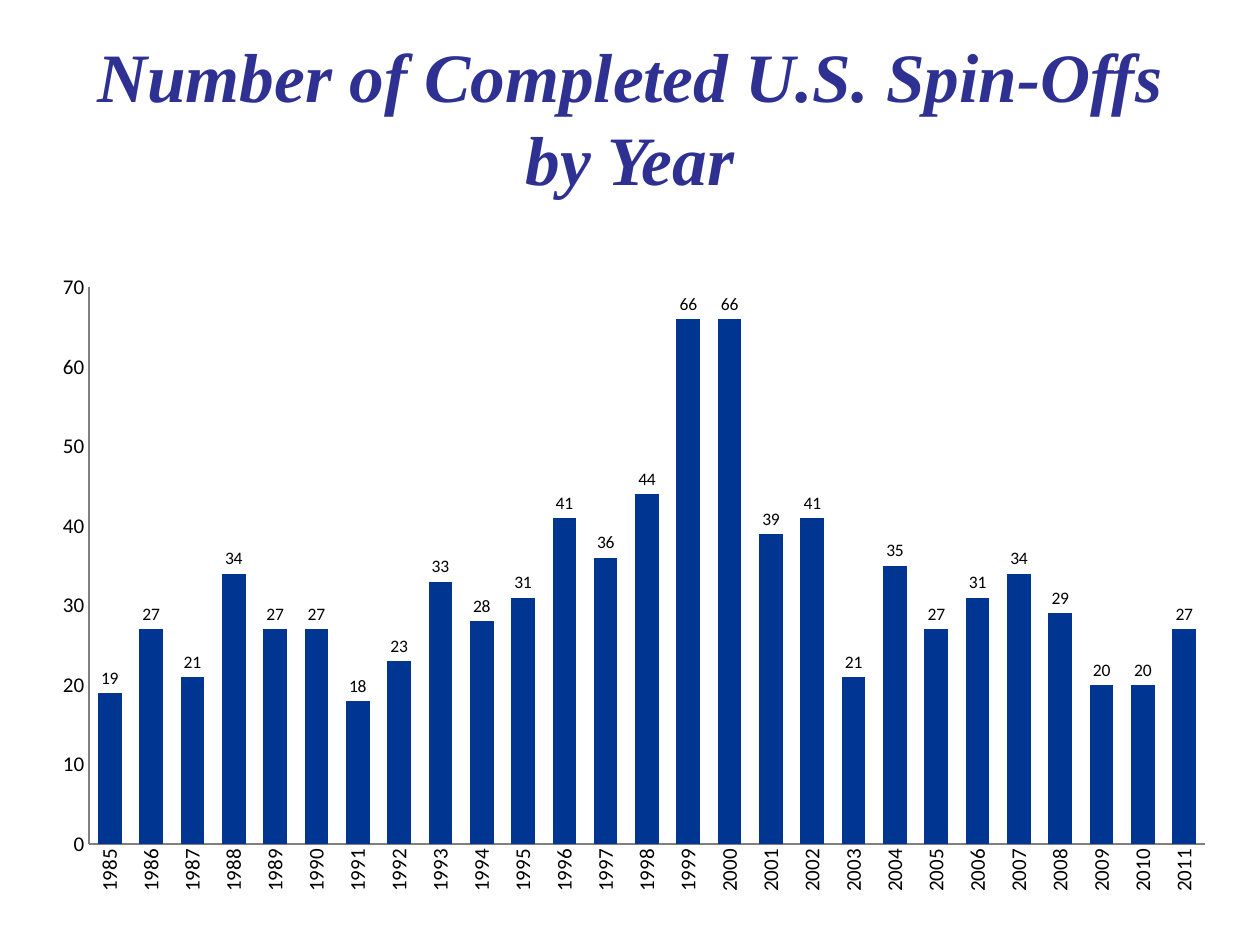
from pptx import Presentation
from pptx.chart.data import CategoryChartData
from pptx.dml.color import RGBColor
from pptx.enum.chart import XL_CHART_TYPE as ChartType, XL_LABEL_POSITION as LabelPosition
from pptx.enum.chart import XL_TICK_MARK as TickMark
from pptx.enum.text import MSO_ANCHOR as Anchor, PP_ALIGN as Align
from pptx.oxml import parse_xml
from pptx.oxml.ns import nsdecls
from pptx.util import Cm, Pt

# Content
TITLE = "Number of Completed U.S. Spin-Offs by Year"
FIRST_YEAR = 1985
SPIN_OFFS = [19, 27, 21, 34, 27, 27, 18, 23, 33, 28, 31, 41, 36, 44,
             66, 66, 39, 41, 21, 35, 27, 31, 34, 29, 20, 20, 27]


class Theme:
    title_font, chart_font = "Times New Roman", "Calibri"
    title_size, axis_size, label_size = Pt(39.6), Pt(12), Pt(10)
    title_color = RGBColor.from_string("2E3192")
    bar_color = RGBColor.from_string("003591")
    text_color = RGBColor.from_string("000000")
    axis_color = RGBColor.from_string("808080")


# Places: left, top, width, height
TITLE_BOX = [Cm(v) for v in (1.27, 0.76, 22.86, 3.18)]
CHART_BOX = [Cm(v) for v in (0.84, 5.28, 23.93, 12.9)]
# Plot area as shares of the chart
PLOT = {"x": 0.04, "y": 0.04, "w": 0.94, "h": 0.87}


def style_font(font, name, size, color):
    font.name, font.size = name, size
    font.color.rgb = color


def add_title(page):
    box = page.shapes.title
    box.left, box.top, box.width, box.height = TITLE_BOX
    frame = box.text_frame
    frame.text = TITLE
    frame.word_wrap = True
    frame.vertical_anchor = Anchor.MIDDLE
    para = frame.paragraphs[0]
    para.alignment = Align.CENTER
    font = para.runs[0].font
    style_font(font, Theme.title_font, Theme.title_size, Theme.title_color)
    font.bold = font.italic = True


def place_plot(chart):
    """Fix the inner plot area inside the chart."""
    plot_area = chart.plots[0]._element.getparent()
    for old in plot_area.findall("{*}layout"):
        plot_area.remove(old)
    shares = "".join(f'<c:{key} val="{share}"/>' for key, share in PLOT.items())
    plot_area.insert(0, parse_xml(
        f'<c:layout {nsdecls("c")}><c:manualLayout><c:layoutTarget val="inner"/>'
        f'<c:xMode val="edge"/><c:yMode val="edge"/>{shares}'
        '</c:manualLayout></c:layout>'))


def add_bars(page):
    data = CategoryChartData()
    data.categories = [str(FIRST_YEAR + i) for i in range(len(SPIN_OFFS))]
    data.add_series("Series 1", SPIN_OFFS)
    chart = page.shapes.add_chart(ChartType.COLUMN_CLUSTERED, *CHART_BOX, data).chart
    chart.has_legend = chart.has_title = False
    style_font(chart.font, Theme.chart_font, Theme.label_size, Theme.text_color)

    # Bars and their values
    plot = chart.plots[0]
    plot.gap_width = 75
    plot.vary_by_categories = False
    fill = plot.series[0].format.fill
    fill.solid()
    fill.fore_color.rgb = Theme.bar_color
    plot.has_data_labels = True
    labels = plot.data_labels
    labels.show_value = True
    labels.position = LabelPosition.OUTSIDE_END
    style_font(labels.font, Theme.chart_font, Theme.label_size, Theme.text_color)

    # Axes
    for axis in (chart.category_axis, chart.value_axis):
        axis.has_major_gridlines = False
        axis.major_tick_mark = axis.minor_tick_mark = TickMark.NONE
        axis.format.line.color.rgb = Theme.axis_color
        axis.format.line.width = Pt(0.75)
        style_font(axis.tick_labels.font, Theme.chart_font, Theme.axis_size,
                   Theme.text_color)
    scale = chart.value_axis
    scale.minimum_scale, scale.maximum_scale, scale.major_unit = 0, 70, 10
    # Years read upwards
    years = chart.category_axis._element
    years.find("{*}txPr").find("{*}bodyPr").set("rot", "-5400000")
    place_plot(chart)


def main():
    deck = Presentation()
    deck.slide_width, deck.slide_height = Cm(25.4), Cm(19.05)
    page = deck.slides.add_slide(deck.slide_layouts[5])
    add_title(page)
    add_bars(page)
    deck.save("out.pptx")


if __name__ == "__main__":
    main()
